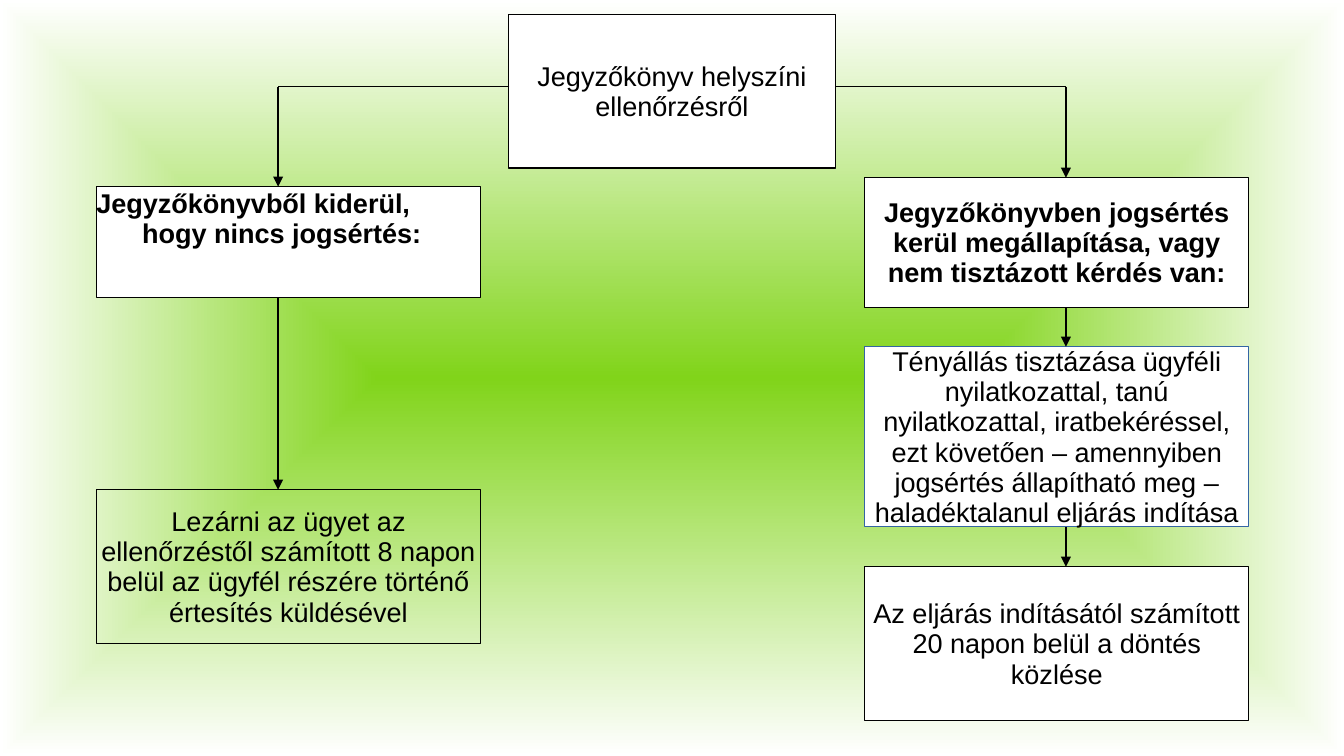
from lxml import etree
from pptx import Presentation
from pptx.dml.color import RGBColor
from pptx.enum.shapes import MSO_CONNECTOR, MSO_SHAPE
from pptx.enum.text import MSO_ANCHOR, PP_ALIGN
from pptx.oxml.ns import qn
from pptx.util import Pt

BLACK = RGBColor(0x00, 0x00, 0x00)
WHITE = RGBColor(0xFF, 0xFF, 0xFF)
GREEN = RGBColor(0x81, 0xD4, 0x1A)
BLUE = RGBColor(0x34, 0x65, 0xA4)

LEFT, RIGHT, BRANCH_WIDTH = 56.9, 510.5, 226.8
LEFT_AXIS, RIGHT_AXIS, FORK_Y = 164.2, 629.3, 51.1
STEP_HEIGHT = 90.7

prs = Presentation()
prs.slide_width, prs.slide_height = Pt(793.44), Pt(446.4)
slide = prs.slides.add_slide(prs.slide_layouts[6])

# Background: green centre fading to white at the edges
backdrop = slide.background.fill
backdrop.gradient()
for stop, color, position in zip(backdrop.gradient_stops, (GREEN, WHITE), (0, 1)):
    stop.color.rgb = color
    stop.position = position
gradient = slide.background._cSld.find(".//" + qn("a:gradFill"))
gradient.remove(gradient.find(qn("a:lin")))
spread = etree.SubElement(gradient, qn("a:path"), path="shape")
etree.SubElement(spread, qn("a:fillToRect"), l="50000", t="50000", r="50000", b="50000")


def add_step(text, left, top, width, height, *, fill=WHITE, line=BLACK, bold=False,
             align=PP_ALIGN.CENTER, anchor=MSO_ANCHOR.MIDDLE, hanging=0):
    step = slide.shapes.add_shape(MSO_SHAPE.RECTANGLE, Pt(left), Pt(top), Pt(width), Pt(height))
    step.shadow.inherit = False
    if fill is None:
        step.fill.background()
    else:
        step.fill.solid()
        step.fill.fore_color.rgb = fill
    step.line.color.rgb = line
    step.line.width = Pt(0.75)

    frame = step.text_frame
    frame.word_wrap = True
    frame.vertical_anchor = anchor
    frame.margin_left = frame.margin_right = frame.margin_bottom = 0
    frame.margin_top = Pt(1.4)
    paragraph = frame.paragraphs[0]
    paragraph.alignment = align
    paragraph.line_spacing = 0.93
    if hanging:
        properties = paragraph._p.get_or_add_pPr()
        properties.set("marL", str(Pt(hanging)))
        properties.set("indent", str(-Pt(hanging)))
    run = paragraph.add_run()
    run.text = text
    run.font.name = "Arial"
    run.font.size = Pt(16)
    run.font.bold = bold
    run.font.color.rgb = BLACK


add_step("Jegyzőkönyvből kiderül, hogy nincs jogsértés:", LEFT, 110.2, BRANCH_WIDTH, 65.4,
         bold=True, align=PP_ALIGN.LEFT, anchor=MSO_ANCHOR.TOP, hanging=27)
add_step("Jegyzőkönyvben jogsértés kerül megállapítása, vagy nem tisztázott kérdés van:",
         RIGHT, 105, BRANCH_WIDTH, 76.4, bold=True)
add_step("Lezárni az ügyet az ellenőrzéstől számított 8 napon belül az ügyfél részére "
         "történő értesítés küldésével", LEFT, 289.2, BRANCH_WIDTH, STEP_HEIGHT, fill=None)
add_step("Jegyzőkönyv helyszíni ellenőrzésről", 300.3, 8.5, 192.8, STEP_HEIGHT)
add_step("Tényállás tisztázása ügyféli nyilatkozattal, tanú nyilatkozattal, iratbekéréssel, "
         "ezt követően – amennyiben jogsértés állapítható meg – haladéktalanul eljárás indítása",
         RIGHT, 204.7, BRANCH_WIDTH, 106.4, line=BLUE)
add_step("Az eljárás indításától számított 20 napon belül a döntés közlése",
         RIGHT, 334.7, BRANCH_WIDTH, STEP_HEIGHT)

# Flow lines: start x, start y, end x, end y, arrowhead at the end
flows = [
    (LEFT_AXIS, 175.6, LEFT_AXIS, 289.2, True),
    (300.7, FORK_Y, LEFT_AXIS, FORK_Y, False),
    (LEFT_AXIS, FORK_Y, LEFT_AXIS, 110.2, True),
    (RIGHT_AXIS, FORK_Y, RIGHT_AXIS, 105, True),
    (RIGHT_AXIS, FORK_Y, 493.1, FORK_Y, False),
    (RIGHT_AXIS, 181.4, RIGHT_AXIS, 204.7, True),
    (RIGHT_AXIS, 311.1, RIGHT_AXIS, 334.7, True),
]
for *ends, has_arrow in flows:
    flow = slide.shapes.add_connector(MSO_CONNECTOR.STRAIGHT, *map(Pt, ends))
    flow.line.color.rgb = BLACK
    flow.line.width = Pt(0.75)
    if has_arrow:
        etree.SubElement(flow.line._get_or_add_ln(), qn("a:tailEnd"), type="triangle")
    etree.SubElement(flow._element.spPr, qn("a:effectLst"))

prs.save("out.pptx")
